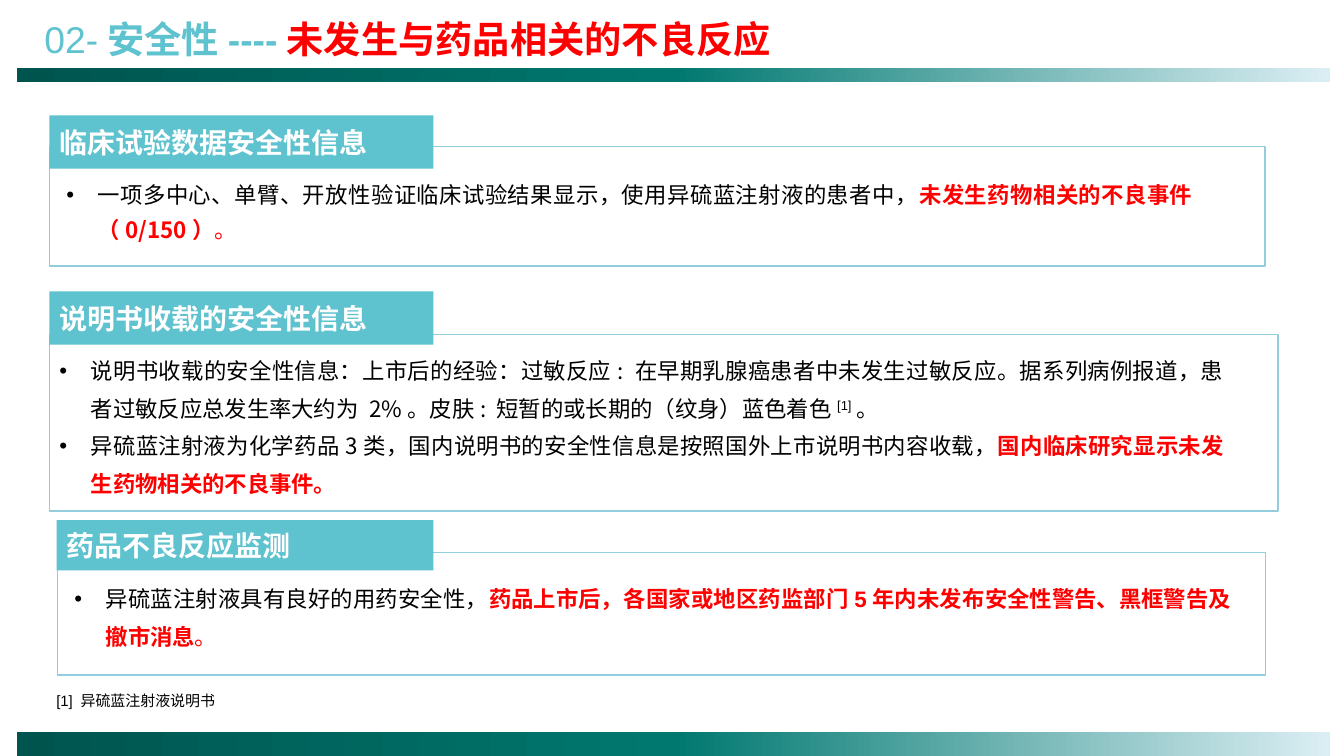
from lxml import etree
from pptx import Presentation
from pptx import util as u
from pptx.dml.color import RGBColor
from pptx.enum import shapes, text
from pptx.oxml.ns import qn

COLORS = {"teal": "5EC2CF", "red": "FF0000", "black": "000000", "white": "FFFFFF",
          "frame": "93CDDD", "dark": "00544E", "green": "00786F", "pale": "DBEEF4"}
ARIAL, NOTO = "Arial", "Noto Sans CJK SC"


def add_run(paragraph, words, size, color, font=NOTO, bold=False, raised=0, spacing=0):
    run = paragraph.add_run()
    run.text = words
    run.font.size, run.font.bold, run.font.name = u.Pt(size), bold, font
    run.font.color.rgb = RGBColor.from_string(COLORS[color])
    props = run.font._element
    east_asian = etree.Element(qn("a:ea"), typeface=NOTO)
    props.find(qn("a:latin")).addnext(east_asian)
    if raised:
        props.set("baseline", str(raised * 1000))
    if spacing:
        props.set("spc", str(round(spacing * 100)))


def add_rect(slide, box, fill=None, line=None):
    rect = slide.shapes.add_shape(shapes.MSO_SHAPE.RECTANGLE, *map(u.Pt, box))
    rect.shadow.inherit = False
    if fill:
        rect.fill.solid()
        rect.fill.fore_color.rgb = RGBColor.from_string(COLORS[fill])
    else:
        rect.fill.background()
    if line:
        rect.line.color.rgb = RGBColor.from_string(COLORS[line])
        rect.line.width = u.Pt(1)
    else:
        rect.line.fill.background()
    return rect


def add_band(slide, box):
    """Bar that fades from dark green to pale blue."""
    band = add_rect(slide, box, fill="dark")
    band.fill.gradient()
    band.fill.gradient_angle = 0
    stops = band.fill._xPr.find(qn("a:gradFill")).find(qn("a:gsLst"))
    for stop in list(stops):
        stops.remove(stop)
    for position, color in ((0, "dark"), (50, "green"), (100, "pale")):
        stop = etree.SubElement(stops, qn("a:gs"), pos=str(position * 1000))
        etree.SubElement(stop, qn("a:srgbClr"), val=COLORS[color])


def add_heading(slide, box):
    heading = slide.shapes.title
    heading.left, heading.top, heading.width, heading.height = map(u.Pt, box)
    frame = heading.text_frame
    frame.vertical_anchor = text.MSO_ANCHOR.TOP
    frame.auto_size = text.MSO_AUTO_SIZE.NONE
    paragraph = frame.paragraphs[0]
    paragraph.alignment = text.PP_ALIGN.LEFT
    add_run(paragraph, "02-", 26.6, "teal", ARIAL)
    add_run(paragraph, "安全性----", 26.6, "teal", ARIAL, bold=True)
    add_run(paragraph, "未发生与药品相关的不良反应", 26.6, "red", ARIAL, bold=True)


def add_text_box(slide, box):
    frame = slide.shapes.add_textbox(*map(u.Pt, box)).text_frame
    frame.word_wrap = True
    return frame


def add_bullets(slide, box, bullets, spacing):
    frame = add_text_box(slide, box)
    for index, runs in enumerate(bullets):
        paragraph = frame.add_paragraph() if index else frame.paragraphs[0]
        paragraph.alignment = text.PP_ALIGN.JUSTIFY
        paragraph.line_spacing = spacing
        props = paragraph._p.get_or_add_pPr()
        props.set("marL", str(u.Pt(22.5)))
        props.set("indent", str(-u.Pt(22.5)))
        etree.SubElement(props, qn("a:buFont"), typeface=ARIAL)
        etree.SubElement(props, qn("a:buChar"), char="•")
        for words, color, style in runs:
            add_run(paragraph, words, 16, color, **style)


def add_section(slide, frame_box, label, label_box, bullets, body_box, spacing):
    """Framed section; label and body boxes are offset from the frame's corner."""
    left, top = frame_box[:2]
    add_rect(slide, frame_box, line="frame")
    dx, dy, width, height = body_box
    add_bullets(slide, (left + dx, top + dy, width, height), bullets, spacing)
    dx, dy, width, height = label_box
    tab = add_rect(slide, (left + dx, top + dy, width, height), fill="teal")
    tab.text_frame.vertical_anchor = text.MSO_ANCHOR.MIDDLE
    paragraph = tab.text_frame.paragraphs[0]
    paragraph.alignment = text.PP_ALIGN.LEFT
    add_run(paragraph, label, 20, "white", ARIAL, bold=True)


def add_footnote(slide, box):
    paragraph = add_text_box(slide, box).paragraphs[0]
    add_run(paragraph, "[1] 异硫蓝注射液说明书", 10.7, "black", ARIAL)


BOLD = {"bold": True}
TIGHT = {"bold": True, "spacing": -0.1}
TRIAL = [[
    ("一项多中心、单臂、开放性验证临床试验结果显示，使用异硫蓝注射液的患者中，", "black", {}),
    ("未发生药物相关的不良事件（0/150）", "red", BOLD),
    ("。", "red", {})]]
LEAFLET = [[
    ("说明书收载的安全性信息：上市后的经验：过敏反应: 在早期乳腺癌患者中未发生过敏反应。"
     "据系列病例报道，患者过敏反应总发生率大约为 2%。皮肤: 短暂的或长期的（纹身）蓝色着色",
     "black", {}),
    ("[1]", "black", {"font": ARIAL, "raised": 30}),
    ("。", "black", {"font": ARIAL})], [
    ("异硫蓝注射液为化学药品3类，国内说明书的安全性信息是按照国外上市说明书内容收载，", "black", {}),
    ("国内临床研究显示未发生药物相关的不良事件。", "red", {"font": ARIAL, "bold": True})]]
MONITORING = [[
    ("异硫蓝注射液具有良好的用药安全性，", "black", {"font": ARIAL}),
    ("药品上市后，", "red", TIGHT),
    ("各国家或地区药监部门5年内未发布", "red", {"font": ARIAL, "bold": True}),
    ("安全性警告、黑框警告及撤市消息", "red", TIGHT),
    ("。", "red", {"spacing": -0.1})]]


def main():
    deck = Presentation()
    deck.slide_width, deck.slide_height = u.Pt(960), u.Pt(540)
    slide = deck.slides.add_slide(deck.slide_layouts[5])
    add_band(slide, (12.2, 48.5, 937.5, 10))
    add_band(slide, (12.2, 522.7, 937.5, 19.4))
    add_heading(slide, (24.5, 8, 683, 39.6))
    add_section(slide, (35.3, 104.5, 868.3, 85.5), "临床试验数据安全性信息", (0, -22, 274.3, 38),
                TRIAL, (5, 15.7, 818.6, 61.2), 1.3)
    add_section(slide, (35.3, 239, 877.7, 126), "说明书收载的安全性信息", (0, -30.8, 274.3, 38),
                LEAFLET, (0, 5, 846, 109.4), 1.4)
    add_section(slide, (41.2, 394.5, 862.6, 87.8), "药品不良反应监测", (-0.8, -23, 269.3, 36),
                MONITORING, (4.9, 12.3, 840.2, 67.7), 1.4)
    add_footnote(slide, (33.1, 490.3, 817.2, 20.2))
    deck.save("out.pptx")


if __name__ == "__main__":
    main()
